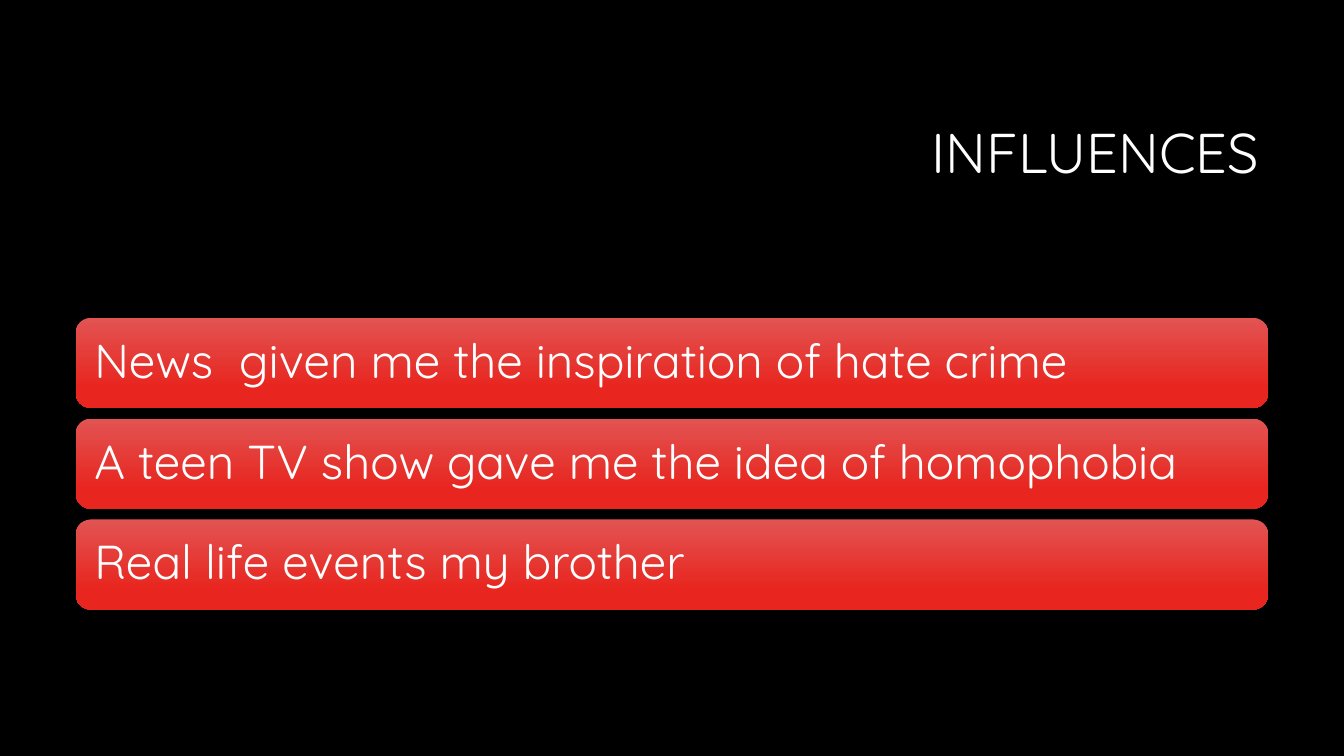
from pptx import Presentation
from pptx.dml.color import RGBColor
from pptx.enum import shapes, text
from pptx.util import Cm, Pt

TITLE = "INFLUENCES"
ITEMS = [
    "News  given me the inspiration of hate crime",
    "A teen TV show gave me the idea of homophobia",
    "Real life events my brother",
]
FONT, WHITE, BLACK = "Quicksand", "FFFFFF", "000000"
STOPS = [(0, "E25452"), (0.78, "E8251F")]
LEFT, TOP, WIDTH, HEIGHT, PITCH = 1.91, 8.01, 30.05, 2.27, 2.54


def color(code):
    return RGBColor.from_string(code)


def write(shape, words, size, align, inset):
    frame = shape.text_frame
    form = {
        "word_wrap": True,
        "vertical_anchor": text.MSO_ANCHOR.MIDDLE,
        "margin_left": Cm(inset),
        "margin_right": Cm(inset),
    }
    for name, value in form.items():
        setattr(frame, name, value)
    para = frame.paragraphs[0]
    para.alignment, para.line_spacing = align, 0.9
    run = para.add_run()
    run.text = words
    for name, value in {"name": FONT, "size": Pt(size)}.items():
        setattr(run.font, name, value)
    run.font.color.rgb = color(WHITE)


def add_bar(slide, row, words):
    box = [Cm(n) for n in (LEFT, TOP + row * PITCH, WIDTH, HEIGHT)]
    bar = slide.shapes.add_shape(shapes.MSO_SHAPE.ROUNDED_RECTANGLE, *box)
    bar.shadow.inherit = False
    bar.line.fill.background()
    bar.fill.gradient()
    bar.fill.gradient_angle = 270
    for stop, (place, code) in zip(bar.fill.gradient_stops, STOPS):
        stop.position = place
        stop.color.rgb = color(code)
    write(bar, words, 34, text.PP_ALIGN.LEFT, 0.36)


def main():
    deck = Presentation()
    deck.slide_width, deck.slide_height = Cm(33.87), Cm(19.05)
    slide = deck.slides.add_slide(deck.slide_layouts[6])
    back = slide.background.fill
    back.solid()
    back.fore_color.rgb = color(BLACK)

    title = slide.shapes.add_textbox(Cm(8.05), Cm(2.13), Cm(23.93), Cm(3.58))
    write(title, TITLE, 40, text.PP_ALIGN.RIGHT, 0.25)
    for row, words in enumerate(ITEMS):
        add_bar(slide, row, words)
    deck.save("out.pptx")


if __name__ == "__main__":
    main()
